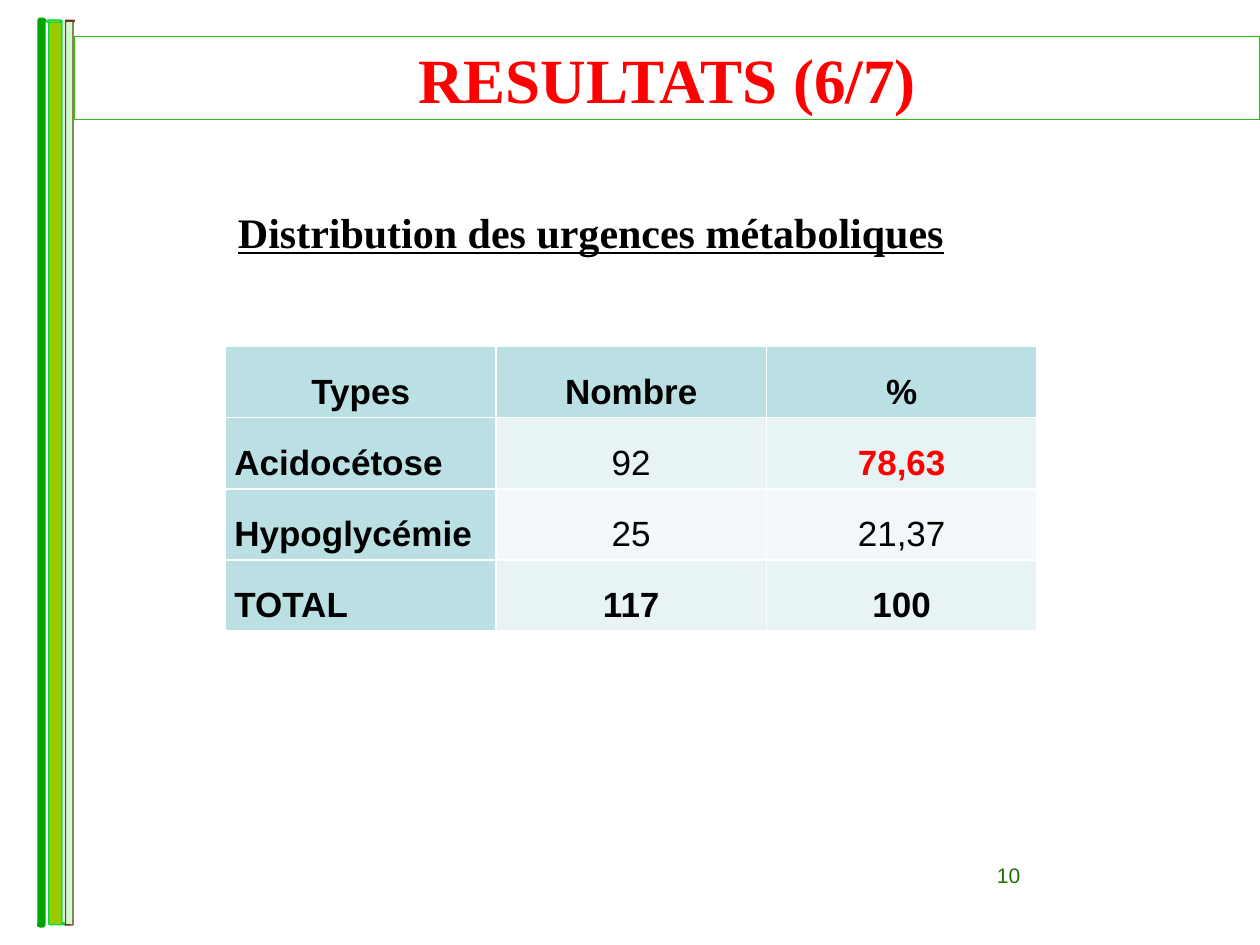
"""Build the results slide on the distribution of metabolic emergencies."""
from lxml.etree import SubElement
from pptx import Presentation
from pptx.dml.color import RGBColor
from pptx.enum.shapes import MSO_SHAPE as Preset
from pptx.enum.text import MSO_ANCHOR as Anchor, MSO_AUTO_SIZE as Fit, PP_ALIGN as Align
from pptx.util import Inches, Pt


def paint(color_format, hex_color):
    color_format.rgb = RGBColor.from_string(hex_color)


def write(frame, wording, size, face, color, align, bold=False):
    paragraph = frame.paragraphs[0]
    paragraph.alignment = align
    run = paragraph.add_run()
    run.text = wording
    run.font.size, run.font.name, run.font.bold = Pt(size), face, bold
    paint(run.font.color, color)
    return run


deck = Presentation()
deck.slide_width, deck.slide_height = Inches(10), Inches(7.5)
slide = deck.slides.add_slide(deck.slide_layouts[5])
shapes = slide.shapes

bar_length = Inches(7.18)
bars = [
    (0.55, 3.75, 0.08, "CCFFCC", "743515", 0.75, True),
    (0.44, 3.75, 0.14, "99CC00", "00DD40", 0.75, False),
    (0.33, 3.75, 0.03, "C00000", "00A500", 3, True),
]
for center_x, center_y, thickness, fill, edge, weight, flipped in bars:
    bar = shapes.add_shape(
        Preset.HORIZONTAL_SCROLL,
        Inches(center_x) - bar_length // 2, Inches(center_y - thickness / 2),
        bar_length, Inches(thickness))
    bar.rotation = 90
    bar.shadow.inherit = False
    bar.fill.solid()
    paint(bar.fill.fore_color, fill)
    paint(bar.line.color, edge)
    bar.line.width = Pt(weight)
    if flipped:
        bar.element.spPr.xfrm.set("flipV", "1")

heading = shapes.title
heading.left, heading.top = Inches(0.59), Inches(0.29)
heading.width, heading.height = deck.slide_width - heading.left, Inches(0.66)
paint(heading.line.color, "2BBE12")
heading.line.width = Pt(0.75)
heading.text_frame.auto_size = Fit.NONE
heading.text_frame.vertical_anchor = Anchor.MIDDLE
write(heading.text_frame, "RESULTATS (6/7)", 36, "Times New Roman", "FF0000", Align.CENTER, True)

margin = Inches(1.79)
subtitle = shapes.add_textbox(margin, Inches(1.59), Inches(7.01), Inches(0.5)).text_frame
subtitle.word_wrap = True
write(subtitle, "Distribution des urgences métaboliques", 24, "Times New Roman",
      "000000", Align.LEFT, True).font.underline = True

page = shapes.add_textbox(Inches(7.42), Inches(6.8), Inches(1.17), Inches(0.5)).text_frame
page.word_wrap = True
write(page, "10", 12, "Arial", "227100", Align.CENTER)

emergencies = [
    ("Types", "Nombre", "%"),
    ("Acidocétose", "92", "78,63"),
    ("Hypoglycémie", "25", "21,37"),
    ("TOTAL", "117", "100"),
]
row_fills = ["BBE0E3", "E7F3F4", "F3F9FA", "E7F3F4"]
table = shapes.add_table(4, 3, margin, Inches(2.75), Inches(6.44), Inches(2.26)).table
for row, (values, row_fill) in enumerate(zip(emergencies, row_fills)):
    for column, value in enumerate(values):
        cell = table.cell(row, column)
        cell.fill.solid()
        paint(cell.fill.fore_color, row_fill if column else "BBE0E3")
        cell.vertical_anchor = Anchor.MIDDLE
        cell.margin_left = cell.margin_right = Inches(0.07)
        cell.margin_top = cell.margin_bottom = 0
        highlighted = value == "78,63"
        write(cell.text_frame, value, 20, "Arial", "FF0000" if highlighted else "000000",
              Align.LEFT if row and not column else Align.CENTER,
              row in (0, 3) or column == 0 or highlighted)
        cell.text_frame.paragraphs[0].line_spacing = 1.5

deck.save("out.pptx")
